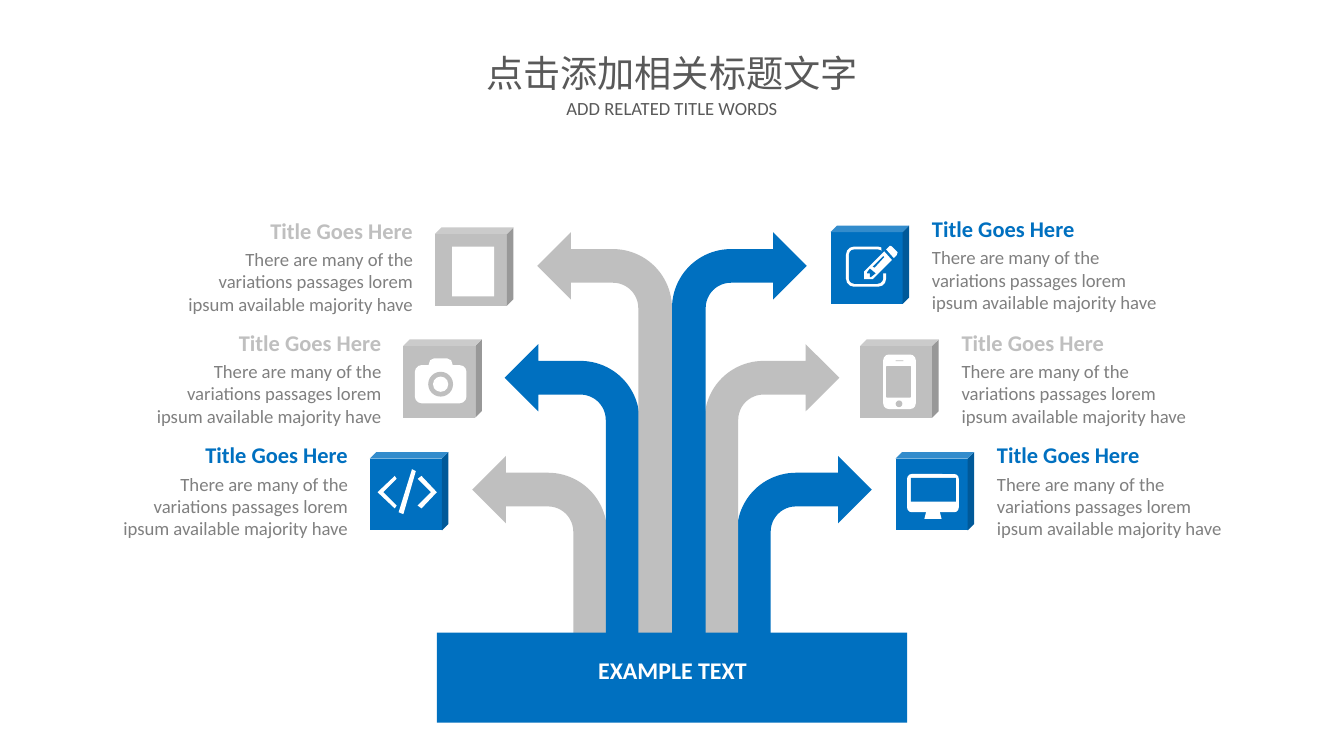
"""Build a tree of bent arrows leading to six icon cubes with captions."""
from pptx import Presentation
from pptx.dml.color import RGBColor
from pptx.enum.shapes import MSO_SHAPE
from pptx.enum.text import PP_ALIGN
from pptx.util import Inches, Pt

ARROW, CUBE, RECT = MSO_SHAPE.BENT_ARROW, MSO_SHAPE.CUBE, MSO_SHAPE.RECTANGLE
ROUND, OVAL = MSO_SHAPE.ROUNDED_RECTANGLE, MSO_SHAPE.OVAL
LEFT, CENTER, RIGHT = PP_ALIGN.LEFT, PP_ALIGN.CENTER, PP_ALIGN.RIGHT

THEME = dict(font="Calibri", blue="0070C0", gray="BFBFBF", white="FFFFFF",
             body="808080", heading="595959",
             title_pt=28, subtitle_pt=14, base_pt=18, caption_pt=16.9, body_pt=14.1)
W, H = 14.06, 7.91

prs = Presentation()
prs.slide_width, prs.slide_height = Inches(W), Inches(H)
s = prs.slides.add_slide(prs.slide_layouts[6])


def shape(shapes, kind, box, color, adj=None, origin=(0, 0)):
    """Draw a preset in a box, or a polygon when kind is None and box lists points."""
    ox, oy = origin
    if kind is None:
        points = [(Inches(ox + x), Inches(oy + y)) for x, y in box]
        builder = shapes.build_freeform(*points[0], scale=1.0)
        builder.add_line_segments(points[1:], close=True)
        sp = builder.convert_to_shape()
    else:
        x, y, w, h = box
        sp = shapes.add_shape(kind, Inches(ox + x), Inches(oy + y), Inches(w), Inches(h))
    if adj is not None:
        sp.adjustments[0] = adj
    sp.shadow.inherit = False
    sp.fill.solid()
    sp.fill.fore_color.rgb = RGBColor.from_string(color)
    sp.line.fill.background()
    return sp


def text(box, *lines, align=LEFT, wrap=True, inset=(0, 0), gap=0):
    """Add a text box; each line is (words, size, color, bold)."""
    tf = s.shapes.add_textbox(*map(Inches, box)).text_frame
    tf.word_wrap = wrap
    tf.margin_left = tf.margin_right = Inches(inset[0])
    tf.margin_top = tf.margin_bottom = Inches(inset[1])
    for i, (words, size, color, bold) in enumerate(lines):
        p = tf.add_paragraph() if i else tf.paragraphs[0]
        p.alignment = align
        p.space_before = Pt(gap if i else 0)
        r = p.add_run()
        r.text = words
        r.font.name, r.font.size, r.font.bold = THEME["font"], Pt(size), bold
        r.font.color.rgb = RGBColor.from_string(color)


TREE_TOP, TREE_BASE, ARROW_W = 2.43, 6.65, 1.41
LEVEL_STEP, STEM_STEP = 1.17, 0.34
for side in ("right", "left"):
    for level in (2, 1, 0):
        x = W / 2 + STEM_STEP * level
        y = TREE_TOP + LEVEL_STEP * level
        if side == "left":
            x = W - x - ARROW_W
        color = THEME["blue" if (level % 2 == 0) == (side == "right") else "gray"]
        sp = shape(s.shapes, ARROW, (x, y, ARROW_W, TREE_BASE - y), color)
        if side == "left":
            sp._element.spPr.get_or_add_xfrm().set("flipH", "1")

INK, HOLE = True, False
PENCIL = [
    (ROUND, (.16, .22, .42, .42), INK, .2),
    (ROUND, (.19, .25, .36, .36), HOLE, .16),
    (RECT, (.53, .2, .07, .3), HOLE, None),
    (None, [(.64, .36), (.44, .56), (.35, .56), (.35, .48), (.56, .27)], INK, None),
    (None, [(.66, .34), (.58, .25), (.62, .21), (.64, .22), (.7, .28), (.69, .31)], INK, None),
    (None, [(.47, .5), (.41, .45), (.38, .49), (.38, .5), (.41, .5), (.41, .54),
            (.42, .54)], HOLE, None),
    (None, [(.44, .43), (.55, .32), (.56, .33), (.46, .44)], HOLE, None),
]
PHONE = [
    (ROUND, (.24, .16, .34, .57), INK, .17),
    (ROUND, (.27, .28, .26, .33), HOLE, .04),
    (RECT, (.37, .22, .08, .01), HOLE, None),
    (OVAL, (.37, .64, .07, .07), HOLE, None),
]
MONITOR = [
    (ROUND, (.12, .23, .54, .4), INK, .12),
    (RECT, (.16, .27, .47, .25), HOLE, None),
    (None, [(.32, .62), (.46, .62), (.48, .7), (.3, .7)], INK, None),
]
SHEET = [(RECT, (.18, .2, .44, .52), INK, None)]
CAMERA = [
    (ROUND, (.12, .27, .54, .4), INK, .18),
    (None, [(.26, .28), (.28, .22), (.32, .2), (.46, .2), (.5, .22), (.52, .28)], INK, None),
    (OVAL, (.26, .34, .26, .26), HOLE, None),
    (OVAL, (.31, .39, .16, .16), INK, None),
]
CODE = [
    (None, [(.26, .59), (.08, .42), (.26, .25), (.28, .28), (.14, .42), (.28, .56)], INK, None),
    (None, [(.3, .63), (.44, .18), (.48, .2), (.35, .65)], INK, None),
    (None, [(.54, .59), (.7, .42), (.54, .25), (.5, .28), (.64, .42), (.5, .56)], INK, None),
]

CUBE_SIZE, CAPTION_W, CAPTION_H = 0.82, 2.46, 1.04
ITEMS = [
    (8.69, 2.36, "blue", PENCIL), (9.0, 3.55, "gray", PHONE), (9.37, 4.73, "blue", MONITOR),
    (4.55, 2.38, "gray", SHEET), (4.22, 3.55, "gray", CAMERA), (3.87, 4.73, "blue", CODE),
]
for x, y, tone, icon in ITEMS:
    color = THEME[tone]
    group = s.shapes.add_group_shape().shapes
    shape(group, CUBE, (x, y, CUBE_SIZE, CUBE_SIZE), color, adj=0.083)
    for kind, box, ink, adj in icon:
        shape(group, kind, box, THEME["white"] if ink else color, adj, origin=(x, y))
    on_right = x > W / 2
    caption_x = x + CUBE_SIZE + 0.24 if on_right else x - 0.23 - CAPTION_W
    text((caption_x, y - 0.11, CAPTION_W, CAPTION_H),
         ("Title Goes Here", THEME["caption_pt"], color, True),
         ("There are many of the variations passages lorem ipsum available majority have",
          THEME["body_pt"], THEME["body"], False),
         align=LEFT if on_right else RIGHT, gap=3)

BASE_W = 4.92
shape(s.shapes, RECT, ((W - BASE_W) / 2, 6.62, BASE_W, 0.94), THEME["blue"])
text((5.51, 6.81, 3.05, 0.4), ("EXAMPLE TEXT", THEME["base_pt"], THEME["white"], True),
     align=CENTER, inset=(0.1, 0.05))
text((4.96, 0.48, 4.14, 0.58),
     ("点击添加相关标题文字", THEME["title_pt"], THEME["heading"], False),
     align=CENTER, wrap=False, inset=(0.11, 0.05))
text((5.79, 0.97, 2.48, 0.34),
     ("ADD RELATED TITLE WORDS", THEME["subtitle_pt"], THEME["heading"], False),
     align=CENTER, wrap=False, inset=(0.11, 0.05))

prs.save("out.pptx")
